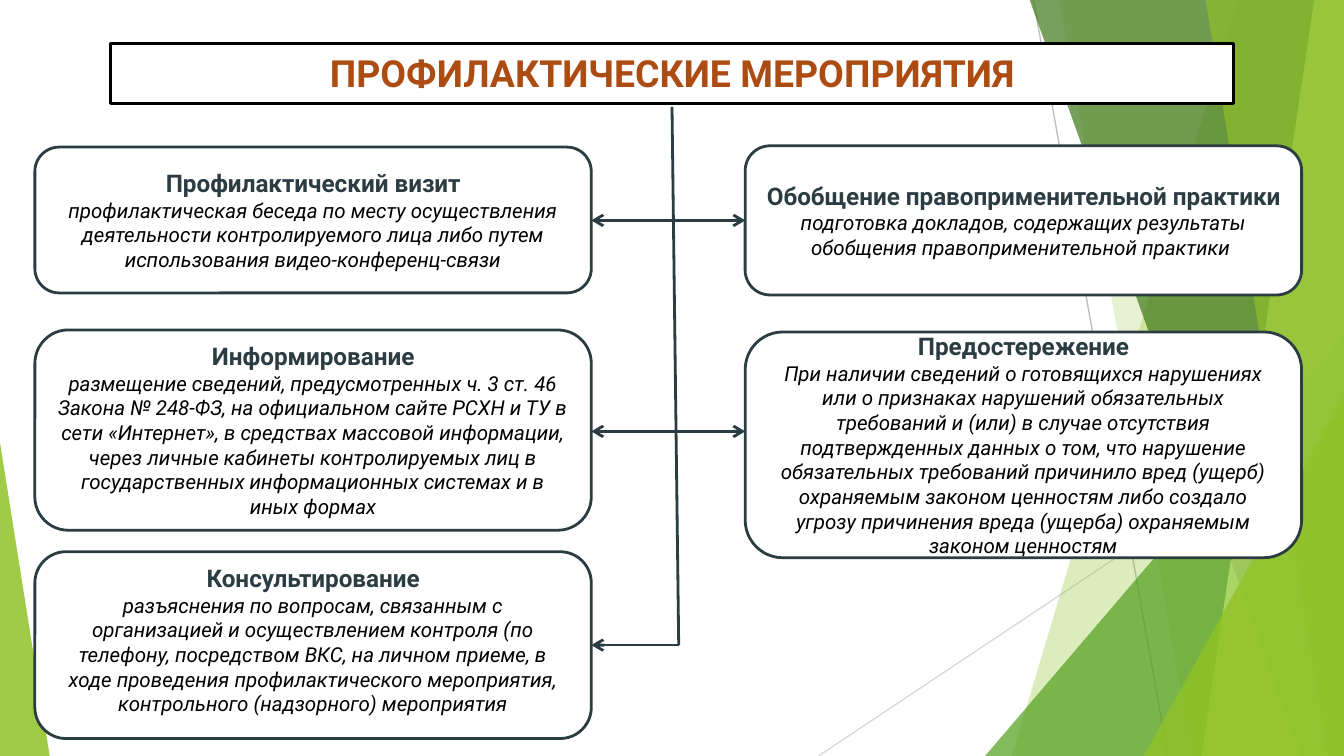
from lxml import etree
from pptx import Presentation
from pptx.dml.color import RGBColor
from pptx.enum.shapes import MSO_CONNECTOR, MSO_SHAPE
from pptx.enum.text import MSO_ANCHOR, PP_ALIGN
from pptx.oxml.ns import qn
from pptx.util import Emu, Pt

LINE = MSO_CONNECTOR.STRAIGHT
RECT = MSO_SHAPE.RECTANGLE
ROUNDED = MSO_SHAPE.ROUNDED_RECTANGLE
TRIANGLE = MSO_SHAPE.ISOSCELES_TRIANGLE
TOP, MIDDLE = MSO_ANCHOR.TOP, MSO_ANCHOR.MIDDLE
CENTER = PP_ALIGN.CENTER

PX = 4572  # EMU per px, 200 px to the inch
WIDTH, HEIGHT = 2000, 1125
DARK, WHITE, BLACK = "2C3C43", "FFFFFF", "000000"
LIME = "90C226"
TITLE = {"size": Pt(20), "bold": True, "color": "AD4C12"}
HEADING = {"size": Pt(13), "bold": True, "color": DARK}
BODY = {"size": Pt(11), "italic": True, "color": BLACK}

BOX_W, LEFT, RIGHT = 828, 52, 1109
LEFT_EDGE = LEFT + BOX_W
# left, top, height, extra bottom inset, heading, body
BOXES = [
    (LEFT, 219, 217, 0, "Профилактический визит",
     "профилактическая беседа по месту осуществления деятельности контролируемого лица "
     "либо путем использования видео-конференц-связи"),
    (LEFT, 491, 298, 0, "Информирование",
     "размещение сведений, предусмотренных ч. 3 ст. 46 Закона № 248-ФЗ, на официальном "
     "сайте РСХН и ТУ в сети «Интернет», в средствах массовой информации, через личные "
     "кабинеты контролируемых лиц в государственных информационных системах и в иных формах"),
    (LEFT, 821, 278, 16, "Консультирование",
     "разъяснения по вопросам, связанным с организацией и осуществлением контроля "
     "(по телефону, посредством ВКС, на личном приеме, в ходе проведения "
     "профилактического мероприятия, контрольного (надзорного) мероприятия"),
    (RIGHT, 217, 222, 0, "Обобщение правоприменительной практики",
     "подготовка докладов, содержащих результаты обобщения правоприменительной практики "),
    (RIGHT, 494, 336, 0, "Предостережение",
     "При наличии сведений о готовящихся нарушениях или о признаках нарушений "
     "обязательных требований и (или) в случае отсутствия подтвержденных данных о том, "
     "что нарушение обязательных требований причинило вред (ущерб) охраняемым законом "
     "ценностям либо создало угрозу причинения вреда (ущерба) охраняемым законом ценностям"),
]


def px(n):
    return Emu(n * PX)


def rgb(value):
    return RGBColor.from_string(value)


class Deck:
    font = "Roboto"
    stroke = 1.5

    def __init__(self):
        self.prs = Presentation()
        self.prs.slide_width, self.prs.slide_height = px(WIDTH), px(HEIGHT)
        self.s = self.prs.slides.add_slide(self.prs.slide_layouts[6])

    def paint(self, sp, fill, opacity=100, line=None):
        """Set fill, opacity in percent and outline, without a shadow."""
        sp.shadow.inherit = False
        sp.fill.solid()
        sp.fill.fore_color.rgb = rgb(fill)
        if opacity < 100:
            color = sp.fill._xPr.find(".//" + qn("a:srgbClr"))
            etree.SubElement(color, qn("a:alpha"), val=str(opacity * 1000))
        if line:
            sp.line.color.rgb = rgb(line)
            sp.line.width = Pt(self.stroke)
        else:
            sp.line.fill.background()

    def band(self, top_x, bottom_x, fill, opacity):
        """Background area between a slanted edge and the right of the slide."""
        builder = self.s.shapes.build_freeform(top_x, -1, scale=PX)
        builder.add_line_segments([(WIDTH, -1), (WIDTH, HEIGHT), (bottom_x, HEIGHT)])
        self.paint(builder.convert_to_shape(), fill, opacity)

    def triangle(self, x, y, w, apex, fill, opacity):
        """Background triangle that stands on the bottom of the slide."""
        sp = self.s.shapes.add_shape(TRIANGLE, px(x), px(y), px(w), px(HEIGHT - y))
        sp.adjustments[0] = apex
        self.paint(sp, fill, opacity)

    def box(self, kind, x, y, w, h, line, paragraphs, anchor=MIDDLE, extra=0):
        sp = self.s.shapes.add_shape(kind, px(x), px(y), px(w), px(h))
        self.paint(sp, WHITE, line=line)
        tf = sp.text_frame
        tf.word_wrap = True
        tf.vertical_anchor = anchor
        tf.margin_bottom = px(10 + extra)
        for i, (text, style) in enumerate(paragraphs):
            p = tf.add_paragraph() if i else tf.paragraphs[0]
            p.alignment = CENTER
            r = p.add_run()
            r.text = text
            r.font.name = self.font
            for name, value in style.items():
                if name == "color":
                    r.font.color.rgb = rgb(value)
                else:
                    setattr(r.font, name, value)

    def line(self, x1, y1, x2, y2, color=DARK, width=stroke, ends=()):
        """Straight line; ends lists the arrowheads, headEnd before tailEnd."""
        sp = self.s.shapes.add_connector(LINE, px(x1), px(y1), px(x2), px(y2))
        sp.line.color.rgb = rgb(color)
        sp.line.width = Pt(width)
        for end in ends:
            etree.SubElement(sp.line._get_or_add_ln(), qn("a:" + end), type="arrow")
        etree.SubElement(sp._element.spPr, qn("a:effectLst"))


def main():
    deck = Deck()

    deck.line(1538, 0, 1738, HEIGHT, "BFBFBF", 0.75)
    deck.line(WIDTH, 604, 1218, HEIGHT, "D9D9D9", 0.75)
    deck.band(1842, 1506, LIME, 30)
    deck.band(1576, 1774, LIME, 20)
    deck.triangle(1466, 500, 534, 1, "54A021", 72)
    deck.band(1532, 1936, "3F7819", 70)
    deck.band(1956, 1788, "C0E474", 70)
    deck.band(1794, 1976, LIME, 65)
    deck.triangle(1702, 588, 298, 1, LIME, 80)
    deck.triangle(0, 658, 74, 0, LIME, 85)

    for x, y, h, extra, heading, body in BOXES:
        deck.box(ROUNDED, x, y, BOX_W, h, DARK,
                 [(heading, HEADING), (body, BODY)], extra=extra)

    deck.line(1010, 960, LEFT_EDGE, 960, ends=["tailEnd"])
    deck.line(1000, 159, 1010, 960)
    for y in (328, 642):
        deck.line(LEFT_EDGE, y, RIGHT, y, ends=["headEnd", "tailEnd"])

    deck.box(RECT, 165, 65, 1671, 89, BLACK,
             [("ПРОФИЛАКТИЧЕСКИЕ МЕРОПРИЯТИЯ", TITLE)], anchor=TOP)

    deck.prs.save("out.pptx")


if __name__ == "__main__":
    main()
